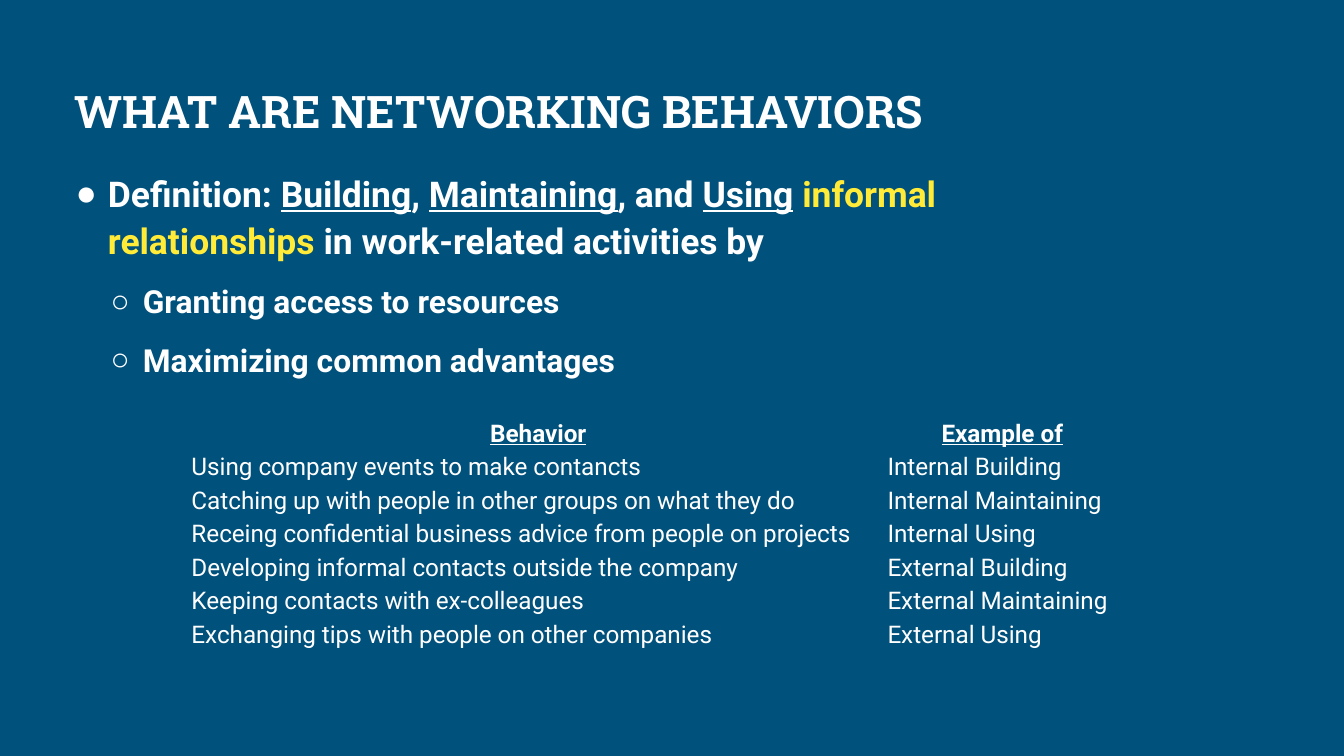
from lxml.etree import SubElement
from pptx import Presentation
from pptx.dml.color import RGBColor
from pptx.enum.text import MSO_ANCHOR, MSO_AUTO_SIZE, PP_ALIGN
from pptx.oxml.ns import qn
from pptx.util import Inches, Pt

WIDTH = 10
HEIGHT = WIDTH * 9 / 16
BACKGROUND, WHITE, YELLOW = "00517C", "FFFFFF", "FFEB38"
NO_STYLE_NO_GRID = "{2D5ABB26-0587-4C30-8999-92F81FD0307C}"

TITLE = "WHAT ARE NETWORKING BEHAVIORS"
# Each run: text, underlined, colour
DEFINITION = [
    ("Definition: ", False, WHITE),
    ("Building", True, WHITE),
    (", ", False, WHITE),
    ("Maintaining", True, WHITE),
    (", and ", False, WHITE),
    ("Using", True, WHITE),
    (" ", False, WHITE),
    ("informal relationships ", False, YELLOW),
    ("in work-related activities by", False, WHITE),
]
MEANS = ["Granting access to resources", "Maximizing common advantages"]
BEHAVIORS = [
    ("Behavior", "Example of"),
    ("Using company events to make contancts", "Internal Building"),
    ("Catching up with people in other groups on what they do", "Internal Maintaining"),
    ("Receing confidential business advice from people on projects", "Internal Using"),
    ("Developing informal contacts outside the company", "External Building"),
    ("Keeping contacts with ex-colleagues", "External Maintaining"),
    ("Exchanging tips with people on other companies", "External Using"),
]


def color(hex_string):
    return RGBColor.from_string(hex_string)


def box(left, top, width, height):
    """Turn percentages of the slide's size into lengths."""
    return (Inches(left * WIDTH / 100), Inches(top * HEIGHT / 100),
            Inches(width * WIDTH / 100), Inches(height * HEIGHT / 100))


def style_font(font, size, name="Roboto", bold=True, underline=False):
    font.size, font.name, font.bold, font.underline = Pt(size), name, bold, underline
    font.color.rgb = color(WHITE)


def place(shape, area):
    """Fit a placeholder to its area and return its text frame."""
    shape.left, shape.top, shape.width, shape.height = area
    frame = shape.text_frame
    frame.word_wrap = True
    frame.auto_size = MSO_AUTO_SIZE.NONE
    frame.vertical_anchor = MSO_ANCHOR.TOP
    frame.margin_left = frame.margin_right = Inches(0.07)
    frame.margin_top = frame.margin_bottom = Inches(0.04)
    return frame


def format_bullet(paragraph, level, character, indent, line_spacing, space_before):
    paragraph.level = level
    paragraph.line_spacing = line_spacing
    paragraph.space_before = Pt(space_before)
    paragraph.alignment = PP_ALIGN.LEFT
    properties = paragraph._p.get_or_add_pPr()
    properties.set("marL", str(Inches(indent)))
    properties.set("indent", str(Inches(-0.24)))
    bullet_color = SubElement(properties, qn("a:buClr"))
    SubElement(bullet_color, qn("a:srgbClr"), val=WHITE)
    SubElement(properties, qn("a:buFont"), typeface="Arial")
    SubElement(properties, qn("a:buChar"), char=character)


def add_title(slide, area):
    paragraph = place(slide.shapes.title, area).paragraphs[0]
    paragraph.text = TITLE
    paragraph.alignment = PP_ALIGN.LEFT
    style_font(paragraph.font, 24, "Roboto Slab")


def add_definition(slide, area):
    frame = place(slide.placeholders[1], area)
    paragraph = frame.paragraphs[0]
    format_bullet(paragraph, 0, "●", 0.25, 1.1, 0)
    style_font(paragraph.font, 19)
    for text, underlined, run_color in DEFINITION:
        run = paragraph.add_run()
        run.text = text
        run.font.underline = underlined
        run.font.color.rgb = color(run_color)
    for text in MEANS:
        paragraph = frame.add_paragraph()
        paragraph.text = text
        format_bullet(paragraph, 1, "○", 0.51, 1.15, 8)
        style_font(paragraph.font, 17)


def add_behavior_table(slide, area):
    table = slide.shapes.add_table(len(BEHAVIORS), 2, *area).table
    table.first_row = table.horz_banding = False
    table._tbl.tblPr.find(qn("a:tableStyleId")).text = NO_STYLE_NO_GRID
    for column, share in zip(table.columns, (0.75, 0.25)):
        column.width = int(area[2] * share)
    for row_index, texts in enumerate(BEHAVIORS):
        header = row_index == 0
        for column_index, text in enumerate(texts):
            cell = table.cell(row_index, column_index)
            cell.fill.background()
            cell.vertical_anchor = MSO_ANCHOR.BOTTOM
            cell.margin_left = cell.margin_right = cell.margin_top = Inches(0.01)
            cell.margin_bottom = 0
            paragraph = cell.text_frame.paragraphs[0]
            paragraph.text = text
            paragraph.alignment = PP_ALIGN.CENTER if header else PP_ALIGN.LEFT
            style_font(paragraph.font, 13, bold=header, underline=header)


def main():
    presentation = Presentation()
    presentation.slide_width = Inches(WIDTH)
    presentation.slide_height = Inches(HEIGHT)
    slide = presentation.slides.add_slide(presentation.slide_layouts[1])
    slide.background.fill.solid()
    slide.background.fill.fore_color.rgb = color(BACKGROUND)
    add_title(slide, box(4.83, 10.3, 90.5, 17.25))
    add_definition(slide, box(4.83, 21.5, 78.5, 53))
    add_behavior_table(slide, box(14.15, 54.8, 69.05, 31.1))
    presentation.save("out.pptx")


if __name__ == "__main__":
    main()
